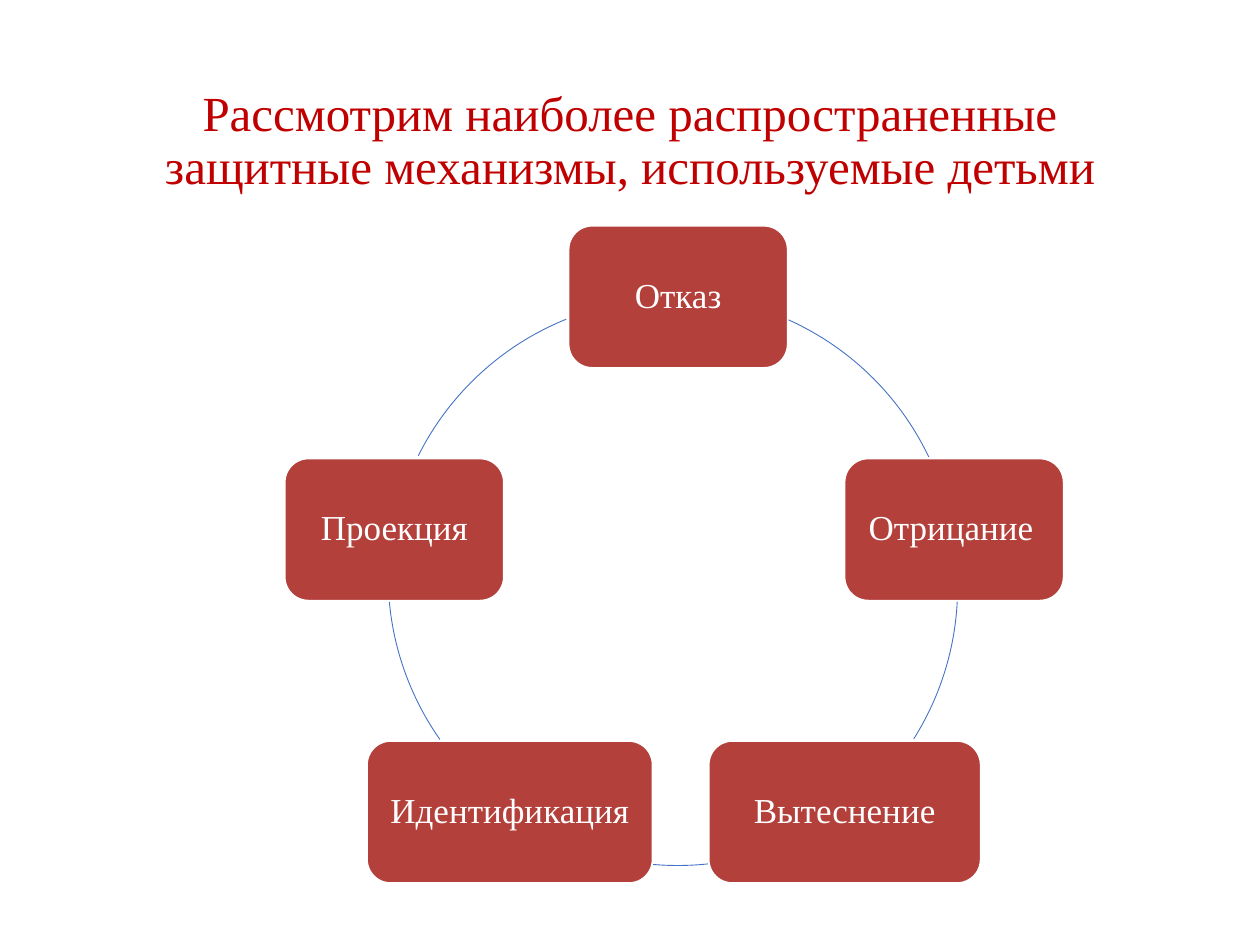
from pptx import Presentation
from pptx import util as u
from pptx.dml.color import RGBColor
from pptx.enum import shapes, text

Pt = u.Pt
TITLE_RED = RGBColor(0xC0, 0x00, 0x00)
NODE_RED = RGBColor(0xB3, 0x40, 0x3B)
ARC_BLUE = RGBColor(0x44, 0x72, 0xC4)
WHITE = RGBColor(0xFF, 0xFF, 0xFF)
SERIF = "Times New Roman"

NODE_HEIGHT = 81.2
RING_DIAMETER = 325.4

# Label, left, top, width
NODES = [
    ("Отказ", 324.9, 129, 125.2),
    ("Отрицание", 482.6, 262, 125.2),
    ("Вытеснение", 405, 423.4, 155.4),
    ("Идентификация", 209.7, 423.4, 163.2),
    ("Проекция", 162.7, 262, 125.2),
]

# Left and top of each ring, then start and end angle clockwise from the right
ARCS = [
    (221.2, 168.5, 294.2, 334.5),
    (221.8, 172.8, 3, 32.2),
    (224.6, 169.2, 83.9, 95.1),
    (221.8, 166.3, 144.9, 174.7),
    (221.8, 170.6, 206.6, 248),
]


def write(frame, content, size, color, font=SERIF):
    """Add centred text to the first paragraph of a frame."""
    frame.word_wrap = True
    frame.vertical_anchor = text.MSO_ANCHOR.MIDDLE
    para = frame.paragraphs[0]
    para.alignment = text.PP_ALIGN.CENTER
    para.line_spacing = 0.9
    span = para.add_run()
    span.text = content
    span.font.name = font
    span.font.size = Pt(size)
    span.font.color.rgb = color


def add_title(page, content):
    box = page.shapes.add_textbox(Pt(49.5), Pt(28.8), Pt(621), Pt(104.4))
    write(box.text_frame, content, size=28, color=TITLE_RED)


def add_node(page, label, left, top, width):
    node = page.shapes.add_shape(
        shapes.MSO_SHAPE.ROUNDED_RECTANGLE,
        Pt(left), Pt(top), Pt(width), Pt(NODE_HEIGHT))
    node.shadow.inherit = False
    node.fill.solid()
    node.fill.fore_color.rgb = NODE_RED
    node.line.color.rgb = WHITE
    node.line.width = Pt(1)
    frame = node.text_frame
    frame.margin_left = frame.margin_right = Pt(6)
    frame.margin_top = frame.margin_bottom = Pt(6)
    write(frame, label, size=20, color=WHITE)
    if label == "Отрицание":
        write(frame, " ", size=16, color=WHITE, font="Calibri")


def add_arc(page, left, top, start, end):
    arc = page.shapes.add_shape(
        shapes.MSO_SHAPE.ARC,
        Pt(left), Pt(top), Pt(RING_DIAMETER), Pt(RING_DIAMETER))
    arc.shadow.inherit = False
    arc.fill.background()
    arc.line.color.rgb = ARC_BLUE
    arc.line.width = Pt(0.5)
    # Angles are stored as 60000ths of a degree, adjustments as 100000ths
    arc.adjustments[0] = start * 0.6
    arc.adjustments[1] = end * 0.6


def main():
    deck = Presentation()
    deck.slide_width, deck.slide_height = Pt(720), Pt(540)
    page = deck.slides.add_slide(deck.slide_layouts[6])

    # Heading
    add_title(page, "Рассмотрим наиболее распространенные защитные механизмы, "
                    "используемые детьми")

    # Cycle: each node is followed by the arc to the next one
    for node, arc in zip(NODES, ARCS):
        add_node(page, *node)
        add_arc(page, *arc)

    deck.save("out.pptx")


if __name__ == "__main__":
    main()
